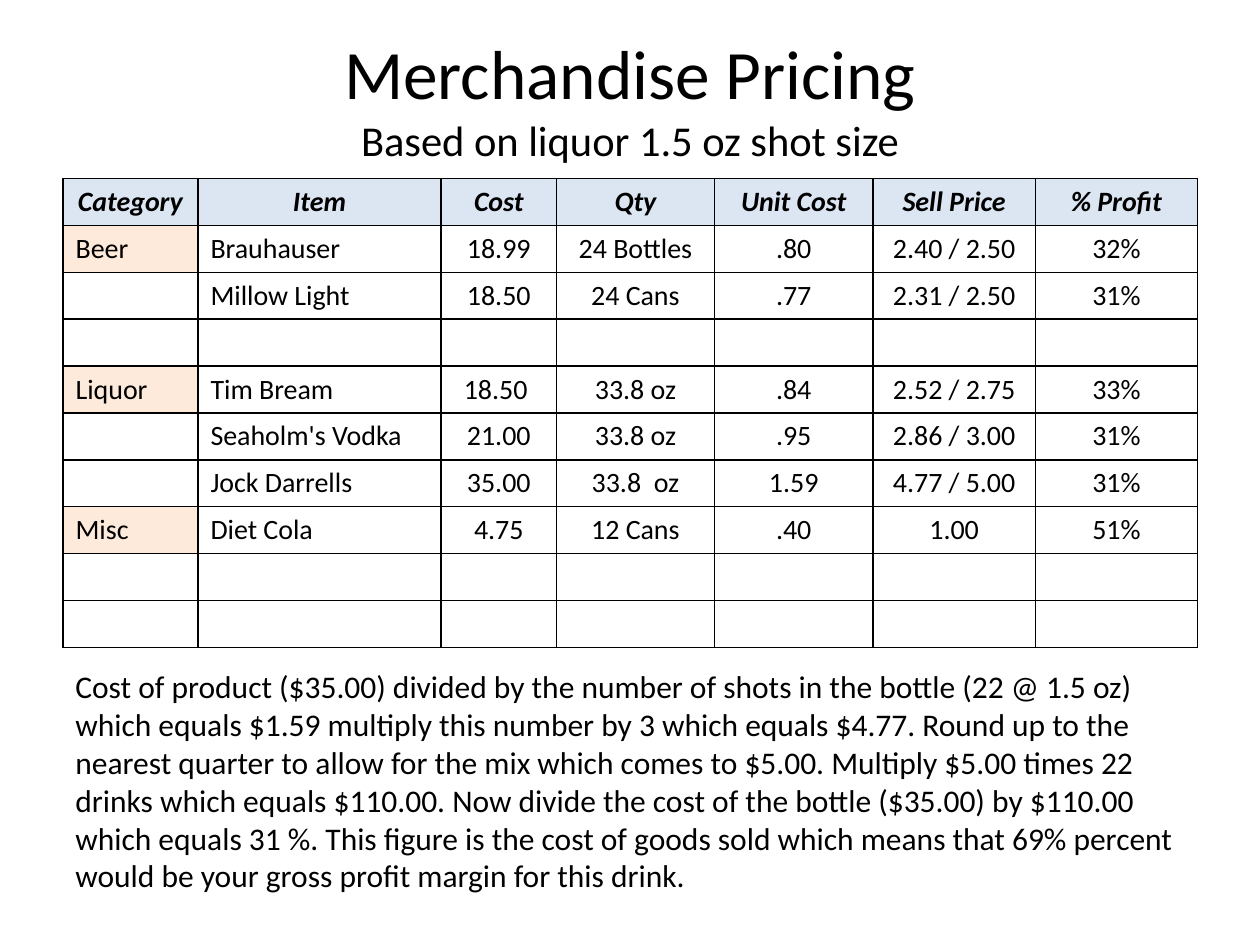
from lxml.etree import SubElement
from pptx import Presentation
from pptx.dml.color import RGBColor
from pptx.enum.text import MSO_ANCHOR, MSO_AUTO_SIZE, PP_ALIGN
from pptx.oxml.ns import qn
from pptx.util import Cm, Pt

COLORS = {"text": "000000", "header": "DCE6F2", "category": "FDEADA"}
FONT = "Calibri"
LEFT, WIDTH = Cm(1.27), Cm(22.86)


def style_font(font, size, bold=False, italic=False):
    font.name, font.size = FONT, Pt(size)
    font.bold, font.italic = bold, italic
    font.color.rgb = RGBColor.from_string(COLORS["text"])


def outline_cell(cell):
    properties = cell._tc.get_or_add_tcPr()
    for position, side in enumerate(("a:lnL", "a:lnR", "a:lnT", "a:lnB")):
        line = SubElement(properties, qn(side), w=str(Pt(1)))
        properties.insert(position, line)
        solid = SubElement(line, qn("a:solidFill"))
        SubElement(solid, qn("a:srgbClr"), val=COLORS["text"])


presentation = Presentation()
presentation.slide_width, presentation.slide_height = Cm(25.4), Cm(19.05)
slide = presentation.slides.add_slide(presentation.slide_layouts[5])

# Title with subtitle line
title = slide.shapes.title
title.left, title.top, title.width, title.height = LEFT, Cm(0.76), WIDTH, Cm(2.41)
title.text_frame.auto_size = MSO_AUTO_SIZE.NONE
title.text_frame.vertical_anchor = MSO_ANCHOR.MIDDLE
heading = title.text_frame.paragraphs[0]
heading.alignment = PP_ALIGN.CENTER
for text, size in (("Merchandise Pricing", 39.6),
                   ("Based on liquor 1.5 oz shot size", 24.3)):
    if heading.runs:
        heading.add_line_break()
    run = heading.add_run()
    run.text = text
    style_font(run.font, size)

# Price table
EMPTY = ("",) * 7
prices = [
    ("Category", "Item", "Cost", "Qty", "Unit Cost", "Sell Price", "% Profit"),
    ("Beer", "Brauhauser", "18.99", "24 Bottles", ".80", "2.40 / 2.50", "32%"),
    ("", "Millow Light", "18.50", "24 Cans", ".77", "2.31 / 2.50", "31%"),
    EMPTY,
    ("Liquor", "Tim Bream", "18.50 ", "33.8 oz", ".84", "2.52 / 2.75", "33%"),
    ("", "Seaholm's Vodka", "21.00", "33.8 oz", ".95", "2.86 / 3.00", "31%"),
    ("", "Jock Darrells", "35.00", "33.8  oz", "1.59", "4.77 / 5.00", "31%"),
    ("Misc", "Diet Cola", "4.75", "12 Cans", ".40", "1.00", "51%"),
    EMPTY,
    EMPTY,
]
column_widths = (2.72, 4.9, 2.33, 3.18, 3.2, 3.27, 3.27)
row_height = Cm(0.93)
table = slide.shapes.add_table(len(prices), len(column_widths), LEFT, Cm(3.6),
                               WIDTH, row_height * len(prices)).table
for column, width in zip(table.columns, column_widths):
    column.width = Cm(width)
for row, values in enumerate(prices):
    table.rows[row].height = row_height
    for column, value in enumerate(values):
        cell = table.cell(row, column)
        is_header = row == 0
        entry = cell.text_frame.paragraphs[0]
        entry.text = value
        entry.alignment = PP_ALIGN.CENTER if is_header or column > 1 else PP_ALIGN.LEFT
        style_font(entry.font, 16, is_header, is_header)
        if is_header or (column == 0 and value):
            cell.fill.solid()
            shade = COLORS["header" if is_header else "category"]
            cell.fill.fore_color.rgb = RGBColor.from_string(shade)
        else:
            cell.fill.background()
        outline_cell(cell)

# Worked example
example = slide.shapes.add_textbox(LEFT, Cm(13.33), WIDTH, Cm(4.88)).text_frame
example.word_wrap = True
example.auto_size = MSO_AUTO_SIZE.SHAPE_TO_FIT_TEXT
explanation = example.paragraphs[0]
explanation.text = (
    "Cost of product ($35.00) divided by the number of shots in the bottle "
    "(22 @ 1.5 oz) which equals $1.59 multiply this number by 3 which equals "
    "$4.77. Round up to the nearest quarter to allow for the mix which comes to "
    "$5.00. Multiply $5.00 times 22 drinks which equals $110.00. Now divide the "
    "cost of the bottle ($35.00) by $110.00 which equals 31 %. This figure is the "
    "cost of goods sold which means that 69% percent would be your gross profit "
    "margin for this drink."
)
style_font(explanation.font, 18)

presentation.save("out.pptx")
